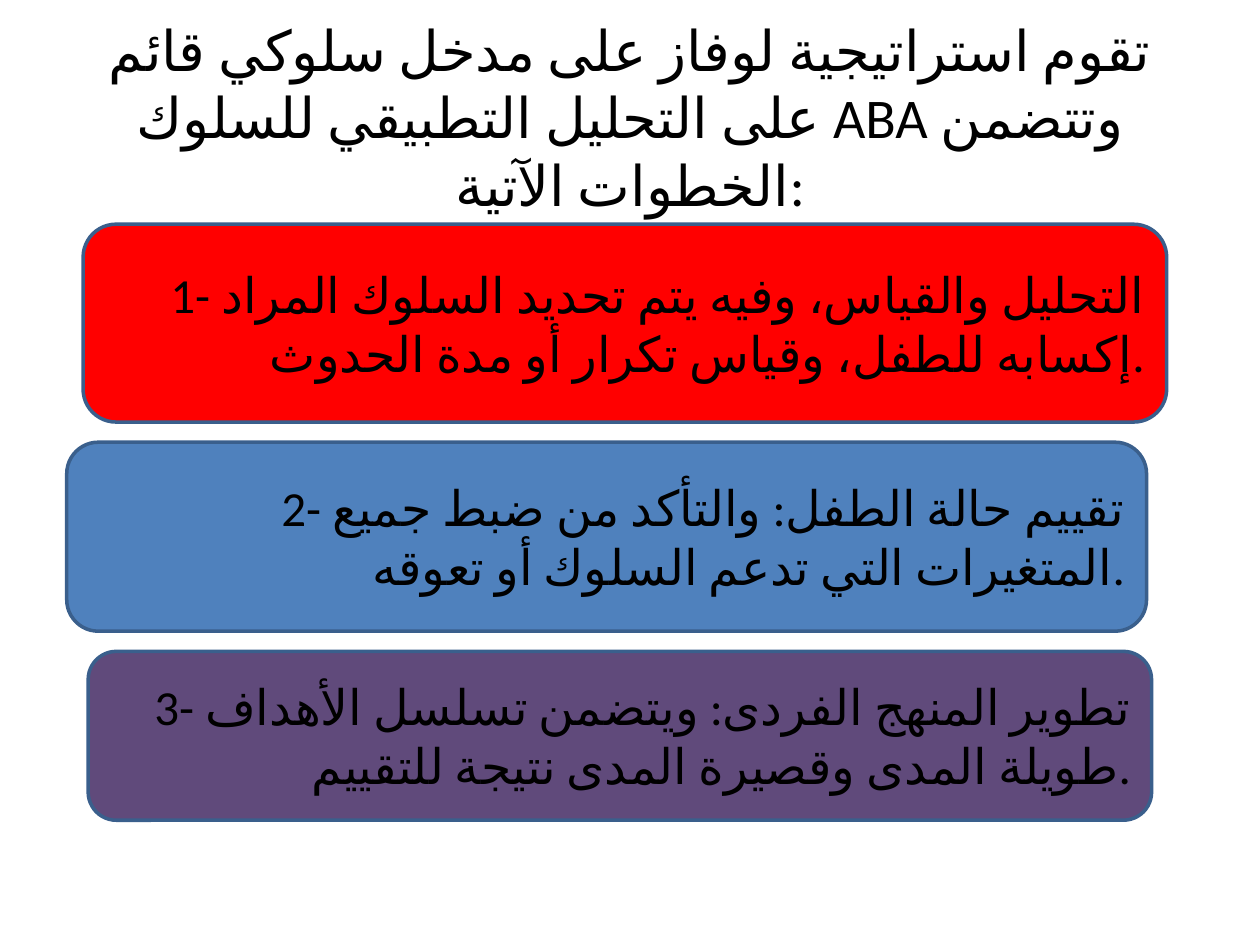
import lxml.etree
import pptx
import pptx.dml.color
import pptx.enum.lang
import pptx.enum.shapes
import pptx.enum.text
import pptx.oxml.ns
import pptx.util

Inches = pptx.util.Inches
Align = pptx.enum.text.PP_ALIGN

TITLE = "تقوم استراتيجية لوفاز على مدخل سلوكي قائم على التحليل التطبيقي للسلوك ABA وتتضمن الخطوات الآتية:"
# Each step: left, top, width, height in inches, fill colour, wording
STEPS = [
    (0.66, 1.78, 8.6, 1.57, "FF0000",
     "1- التحليل والقياس، وفيه يتم تحديد السلوك المراد إكسابه للطفل، وقياس تكرار أو مدة الحدوث."),
    (0.53, 3.51, 8.57, 1.5, "4F81BD",
     "2- تقييم حالة الطفل: والتأكد من ضبط جميع المتغيرات التي تدعم السلوك أو تعوقه."),
    (0.7, 5.17, 8.44, 1.34, "604A7B",
     "3- تطوير المنهج الفردى: ويتضمن تسلسل الأهداف طويلة المدى وقصيرة المدى نتيجة للتقييم."),
]


def color(value):
    return pptx.dml.color.RGBColor.from_string(value)


def set_arabic(span, typeface):
    """Mark the run as Arabic and name its complex-script font."""
    span.font.language_id = pptx.enum.lang.MSO_LANGUAGE_ID.ARABIC
    script_font = lxml.etree.SubElement(
        span.font._element, pptx.oxml.ns.qn("a:cs"))
    script_font.set("typeface", typeface)


def write_text(shape, text, size, alignment):
    frame = shape.text_frame
    frame.word_wrap = True
    frame.vertical_anchor = pptx.enum.text.MSO_ANCHOR.MIDDLE
    para = frame.paragraphs[0]
    para.alignment = alignment
    para.font.name = "Calibri"
    para.font.size = pptx.util.Pt(size)
    para.font.color.rgb = color("000000")
    span = para.add_run()
    span.text = text
    set_arabic(span, "Calibri")


def add_title(page, box, text):
    write_text(page.shapes.add_textbox(*box), text, 32, Align.CENTER)


def add_step(page, box, fill, text):
    step = page.shapes.add_shape(
        pptx.enum.shapes.MSO_SHAPE.FLOWCHART_ALTERNATE_PROCESS, *box)
    step.shadow.inherit = False
    step.fill.solid()
    step.fill.fore_color.rgb = color(fill)
    step.line.color.rgb = color("3A5F8C")
    step.line.width = pptx.util.Pt(2)
    write_text(step, text, 28, Align.RIGHT)


def main():
    deck = pptx.Presentation()
    deck.slide_width, deck.slide_height = Inches(10), Inches(7.5)
    page = deck.slides.add_slide(deck.slide_layouts[6])

    # Heading
    add_title(page, [Inches(n) for n in (0.5, 0.3, 9, 1.25)], TITLE)

    # Numbered steps
    for *box, fill, text in STEPS:
        add_step(page, [Inches(n) for n in box], fill, text)

    deck.save("out.pptx")


if __name__ == "__main__":
    main()
